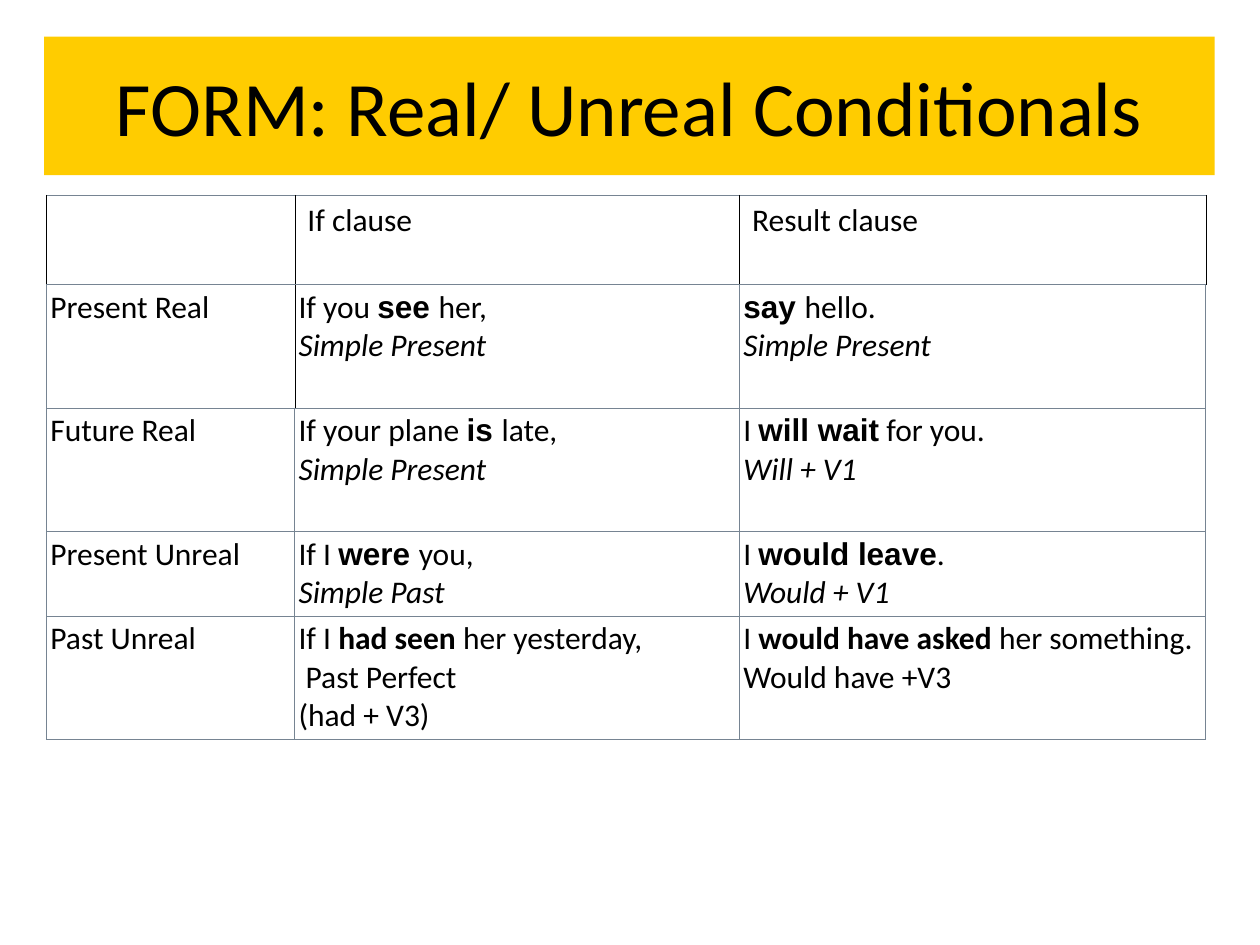
from dataclasses import dataclass

from lxml import etree
from pptx import Presentation
from pptx.dml.color import RGBColor
from pptx.enum.text import MSO_ANCHOR, PP_ALIGN
from pptx.oxml.ns import qn
from pptx.util import Inches, Pt

CENTER, LEFT = PP_ALIGN.CENTER, PP_ALIGN.LEFT
MIDDLE, TOP = MSO_ANCHOR.MIDDLE, MSO_ANCHOR.TOP


@dataclass(frozen=True)
class Theme:
    text: str = "000000"
    banner: str = "FFCC00"
    cell: str = "FFFFFF"
    grid: str = "768492"
    font: str = "Calibri"
    accent_font: str = "Arial"
    title_size: int = 44
    body_size: int = 18


@dataclass(frozen=True)
class Span:
    text: str
    bold: bool = False
    italic: bool = False
    font: str = "Calibri"


@dataclass(frozen=True)
class Line:
    color: str
    width: float


THEME = Theme()
GRID = Line(THEME.grid, 0.75)
HAIR = Line(THEME.text, 0.25)


def plain(text: str) -> list[Span]:
    return [Span(text)]


def italic(text: str) -> list[Span]:
    return [Span(text, italic=True)]


def example(before: str, verb: str, after: str,
            font: str = THEME.accent_font) -> list[Span]:
    spans = [Span(before), Span(verb, bold=True, font=font), Span(after)]
    return [s for s in spans if s.text]


COL_WIDTHS = [1.97, 3.53, 3.7]
ROW_HEIGHTS = [0.71, 0.98, 0.98, 0.67, 0.98]
ROWS = [
    [[], [plain("If clause")], [plain("Result clause")]],
    [[plain("Present Real")],
     [example("If you ", "see ", "her,"), italic("Simple Present")],
     [example("", "say ", "hello."), italic("Simple Present")]],
    [[plain("Future Real")],
     [example("If your plane ", "is ", "late,"), italic("Simple Present")],
     [example("I ", "will wait", " for you."), italic("Will + V1")]],
    [[plain("Present Unreal")],
     [example("If I ", "were ", "you,"), italic("Simple Past")],
     [example("I ", "would leave", "."), italic("Would + V1")]],
    [[plain("Past Unreal")],
     [example("If I ", "had seen ", "her yesterday,", THEME.font),
      plain(" Past Perfect"), plain("(had + V3)")],
     [example("I ", "would have asked", " her something.", THEME.font),
      plain("Would have +V3")]],
]


def write(tf, lines: list[list[Span]], *, size: int, align=LEFT) -> None:
    for i, spans in enumerate(lines):
        p = tf.paragraphs[0] if i == 0 else tf.add_paragraph()
        p.alignment = align
        for span in spans:
            r = p.add_run()
            r.text = span.text
            r.font.name = span.font
            r.font.size = Pt(size)
            r.font.bold = span.bold
            r.font.italic = span.italic
            r.font.color.rgb = RGBColor.from_string(THEME.text)


def set_borders(cell, **sides: Line) -> None:
    tc_pr = cell._tc.get_or_add_tcPr()
    for side in "LRTB":
        line = sides[side]
        ln = etree.SubElement(tc_pr, qn(f"a:ln{side}"), w=str(Pt(line.width)))
        fill = etree.SubElement(ln, qn("a:solidFill"))
        etree.SubElement(fill, qn("a:srgbClr"), val=line.color)


def add_title(slide, text: str) -> None:
    sp = slide.shapes.title
    sp.left, sp.top = Inches(0.35), Inches(0.29)
    sp.width, sp.height = Inches(9.29), Inches(1.1)
    sp.fill.solid()
    sp.fill.fore_color.rgb = RGBColor.from_string(THEME.banner)
    sp.text_frame.vertical_anchor = MIDDLE
    write(sp.text_frame, [plain(text)], size=THEME.title_size, align=CENTER)


def format_cell(cell, row: int, col: int) -> None:
    header = row == 0
    set_borders(cell,
                L=HAIR if header or (row, col) == (1, 1) else GRID,
                R=HAIR if header or (row, col) == (1, 0) else GRID,
                T=GRID, B=GRID)
    cell.vertical_anchor = TOP
    if header:
        cell.fill.background()
        return
    cell.fill.solid()
    cell.fill.fore_color.rgb = RGBColor.from_string(THEME.cell)
    cell.margin_left = cell.margin_right = Inches(0.03)
    cell.margin_top = cell.margin_bottom = Inches(0.03)


def add_conditionals_table(slide) -> None:
    table = slide.shapes.add_table(
        len(ROWS), len(COL_WIDTHS), Inches(0.37), Inches(1.55),
        Inches(sum(COL_WIDTHS)), Inches(sum(ROW_HEIGHTS))).table
    table.first_row = table.horz_banding = False
    for column, width in zip(table.columns, COL_WIDTHS):
        column.width = Inches(width)
    for row, height in zip(table.rows, ROW_HEIGHTS):
        row.height = Inches(height)
    for i, contents in enumerate(ROWS):
        for j, lines in enumerate(contents):
            cell = table.cell(i, j)
            format_cell(cell, i, j)
            write(cell.text_frame, lines, size=THEME.body_size)


def main() -> None:
    prs = Presentation()
    prs.slide_width, prs.slide_height = Inches(10), Inches(7.5)
    slide = prs.slides.add_slide(prs.slide_layouts[5])
    add_title(slide, "FORM: Real/ Unreal Conditionals")
    add_conditionals_table(slide)
    prs.save("out.pptx")


if __name__ == "__main__":
    main()
